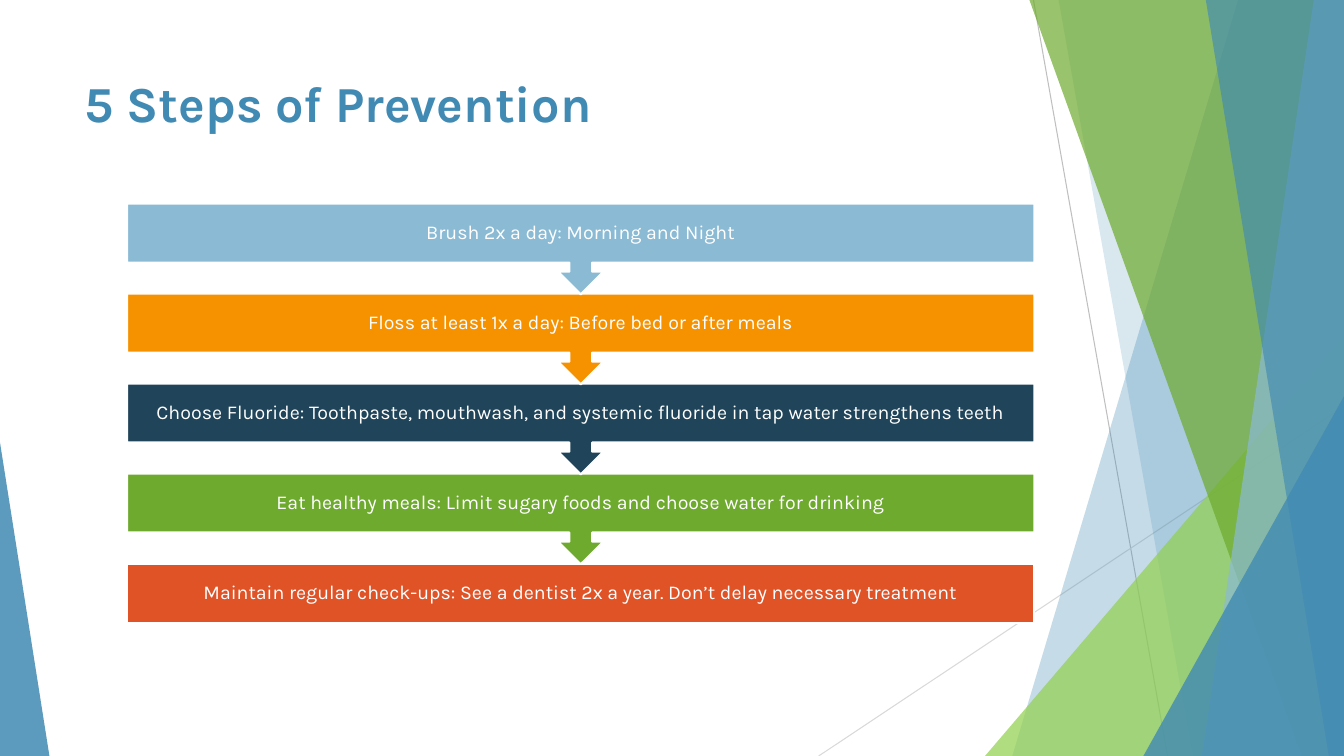
from lxml import etree
from pptx import Presentation
from pptx.dml.color import RGBColor
from pptx.enum.shapes import MSO_CONNECTOR, MSO_SHAPE
from pptx.enum.text import MSO_ANCHOR, PP_ALIGN
from pptx.oxml.ns import qn
from pptx.util import Pt

PX = 9144  # 100 px to the inch
WIDE, HIGH = 1333, 750
FONT = "Karla"
BLUE, SKY, GREEN, LIME = "418AB3", "8ABAD4", "6EAA2E", "92D050"
WHITE = "FFFFFF"

LINE = MSO_CONNECTOR.STRAIGHT
TRI = MSO_SHAPE.ISOSCELES_TRIANGLE
RECT = MSO_SHAPE.RECTANGLE
CALLOUT = MSO_SHAPE.UP_ARROW_CALLOUT
LEFT, CENTER = PP_ALIGN.LEFT, PP_ALIGN.CENTER
TOP, MIDDLE = MSO_ANCHOR.TOP, MSO_ANCHOR.MIDDLE

STEPS = [
    ("Brush 2x a day: Morning and Night", SKY),
    ("Floss at least 1x a day: Before bed or after meals", "F69200"),
    ("Choose Fluoride: Toothpaste, mouthwash, and systemic fluoride "
     "in tap water strengthens teeth", "20455A"),
    ("Eat healthy meals: Limit sugary foods and choose water for drinking",
     GREEN),
    ("Maintain regular check-ups: See a dentist 2x a year. "
     "Don’t delay necessary treatment", "DF5327"),
]


def px(*nums):
    return [round(num * PX) for num in nums]


def color(code):
    return RGBColor.from_string(code)


def paint(shape, code, alpha=100):
    """Fill a shape, with opacity in percent and no outline."""
    shape.shadow.inherit = False
    shape.fill.solid()
    shape.fill.fore_color.rgb = color(code)
    shape.line.fill.background()
    if alpha < 100:
        tint = shape.fill._xPr.find(qn("a:solidFill"))[0]
        etree.SubElement(tint, qn("a:alpha")).set("val", str(alpha * 1000))


def ray(slide, start, end, code):
    line = slide.shapes.add_connector(LINE, *px(*start, *end))
    line.line.color.rgb = color(code)
    line.line.width = Pt(0.75)
    etree.SubElement(line._element.spPr, qn("a:effectLst"))


def facet(slide, top, base, code, alpha):
    """Draw a pane from a slanted left edge to the right slide edge."""
    pen = slide.shapes.build_freeform(top, 0, scale=PX)
    pen.add_line_segments([(WIDE, 0), (WIDE, HIGH), (base, HIGH)], close=True)
    paint(pen.convert_to_shape(), code, alpha)


def wedge(slide, x, y, width, apex, code, alpha):
    """Draw a right triangle that stands on the bottom slide edge."""
    shape = slide.shapes.add_shape(TRI, *px(x, y, width, HIGH - y))
    shape.adjustments[0] = apex
    paint(shape, code, alpha)


def label(slide, box, text, size, code, bold=False, align=LEFT, anchor=TOP):
    frame = slide.shapes.add_textbox(*px(*box)).text_frame
    frame.word_wrap = True
    frame.vertical_anchor = anchor
    frame.text = text
    para = frame.paragraphs[0]
    para.alignment = align
    font = para.runs[0].font
    font.name, font.size, font.bold = FONT, Pt(size), bold
    font.color.rgb = color(code)
    return frame


def decor(slide):
    ray(slide, (1025, 0), (1158, HIGH), "BFBFBF")
    ray(slide, (WIDE, 403), (812, HIGH), "D9D9D9")
    facet(slide, 1228, 1004, BLUE, 30)
    facet(slide, 1050, 1183, BLUE, 20)
    wedge(slide, 977, 333, 356, 1, LIME, 72)
    facet(slide, 1021, 1291, GREEN, 70)
    facet(slide, 1303, 1192, SKY, 70)
    facet(slide, 1196, 1318, BLUE, 65)
    wedge(slide, 1134, 393, 199, 1, BLUE, 80)
    wedge(slide, 0, 439, 49, 0, BLUE, 85)


def flow(slide, box):
    """Stack the steps in the box, last one at the back."""
    x, y, width, height = box
    bar, drop = 59, 90  # bar alone, bar with its arrow
    pitch = (height - bar) / (len(STEPS) - 1)
    last = len(STEPS) - 1
    for i, (text, code) in reversed(list(enumerate(STEPS))):
        top = y + i * pitch
        kind, tall = (RECT, bar) if i == last else (CALLOUT, drop)
        shape = slide.shapes.add_shape(kind, *px(x, top, width, tall))
        shape.rotation = 0 if i == last else 180
        paint(shape, code)
        shape.line.color.rgb = color(WHITE)
        shape.line.width = Pt(1.5)
        frame = label(slide, (x, top, width, bar), text, 14, WHITE,
                      align=CENTER, anchor=MIDDLE)
        frame.margin_left = frame.margin_right = 11 * PX
        frame.margin_top = frame.margin_bottom = 11 * PX
        frame.paragraphs[0].line_spacing = 0.9


def main():
    deck = Presentation()
    deck.slide_width, deck.slide_height = px(WIDE, HIGH)
    slide = deck.slides.add_slide(deck.slide_layouts[6])
    decor(slide)
    label(slide, (74, 67, 940, 144), "5 Steps of Prevention", 36, BLUE,
          bold=True)
    flow(slide, (126, 202, 900, 416))
    deck.save("out.pptx")


if __name__ == "__main__":
    main()
